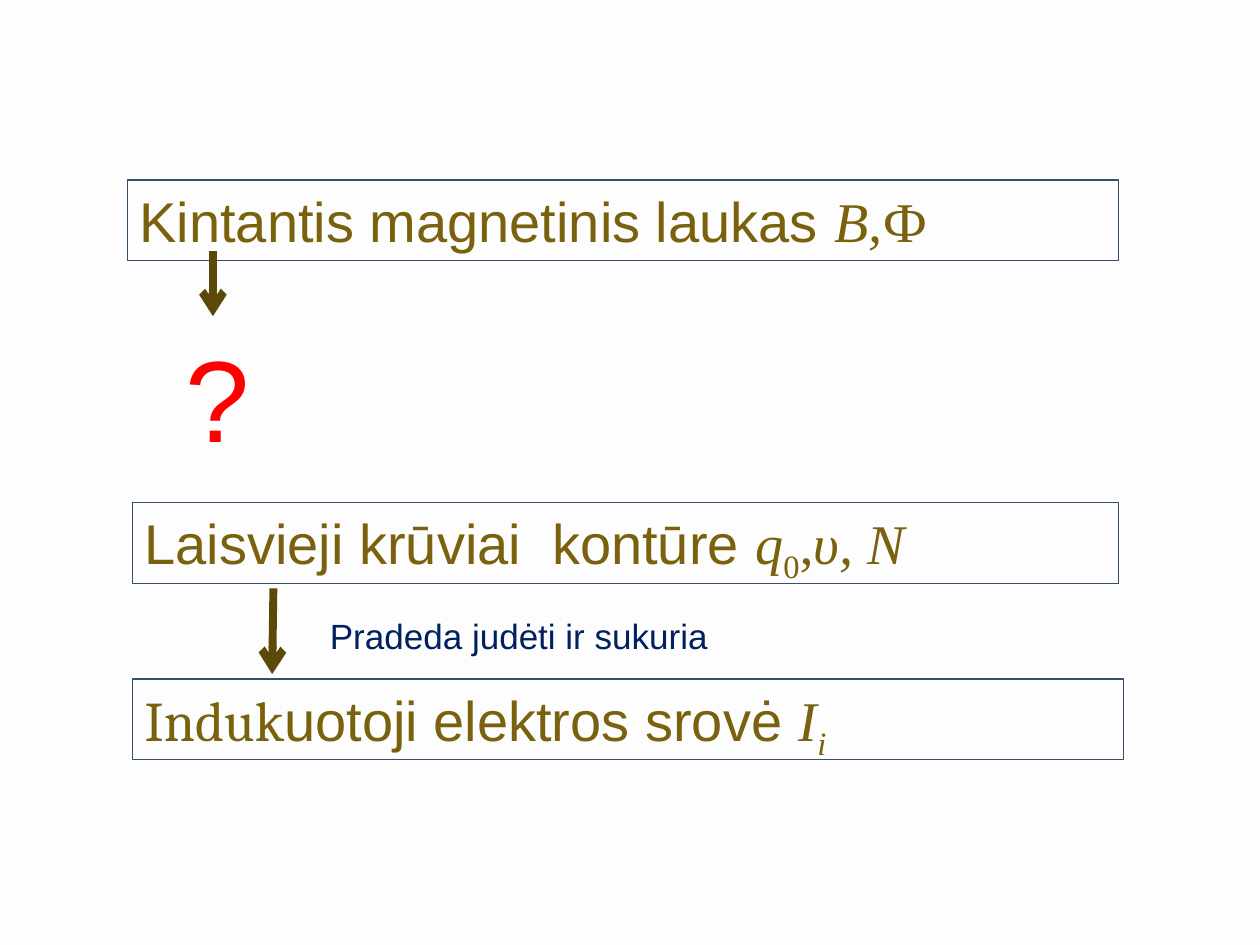
from dataclasses import dataclass

from lxml.etree import SubElement as Sub
from pptx import Presentation
from pptx.dml.color import RGBColor as RGB
from pptx.enum.shapes import MSO_CONNECTOR as Conn, MSO_SHAPE as Shape
from pptx.enum.text import MSO_ANCHOR as Anchor, PP_ALIGN as Align
from pptx.oxml.ns import qn
from pptx.util import Inches, Pt


@dataclass(frozen=True)
class Theme:
    back: RGB = RGB.from_string("FDFDFD")
    frame: RGB = RGB.from_string("344E6D")
    main: RGB = RGB.from_string("7A610D")
    arrow: RGB = RGB.from_string("5C490A")
    note: RGB = RGB.from_string("002060")
    alert: RGB = RGB.from_string("FF0000")
    sans: str = "Arial"
    serif: str = "Cambria"
    math: str = "Times New Roman"
    big: int = 32
    small: int = 20
    huge: int = 66
    thin: float = 0.75
    thick: float = 4.5


class Board:
    def __init__(self, slide, theme):
        self.slide, self.theme = slide, theme
        slide.background.fill.solid()
        slide.background.fill.fore_color.rgb = theme.back

    def style(self, font, size, color):
        font.size = Pt(size)
        font.color.rgb = color

    def box(self, left, top, width, *parts):
        """Framed line of text; each part is (text, font, italic, subscript)."""
        t = self.theme
        box = self.slide.shapes.add_shape(
            Shape.RECTANGLE, Inches(left), Inches(top), Inches(width), Inches(0.64))
        box.shadow.inherit = False
        box.fill.background()
        box.line.color.rgb = t.frame
        box.line.width = Pt(t.thin)
        frame = box.text_frame
        frame.word_wrap = True
        frame.vertical_anchor = Anchor.TOP
        para = frame.paragraphs[0]
        para.alignment = Align.LEFT
        self.style(para.font, t.big, t.main)
        for text, name, italic, sub in parts:
            run = para.add_run()
            run.text = text
            self.style(run.font, t.big, t.main)
            run.font.name = name
            run.font.italic = italic
            if sub:
                run._r.get_or_add_rPr().set("baseline", "-25000")

    def label(self, left, top, width, height, text, size, color):
        box = self.slide.shapes.add_textbox(
            Inches(left), Inches(top), Inches(width), Inches(height))
        box.text_frame.word_wrap = True
        para = box.text_frame.paragraphs[0]
        para.text = text
        self.style(para.font, size, color)
        para.font.name = self.theme.sans

    def arrow(self, x1, y1, x2, y2):
        line = self.slide.shapes.add_connector(
            Conn.STRAIGHT, Inches(x1), Inches(y1), Inches(x2), Inches(y2))
        line.line.color.rgb = self.theme.arrow
        line.line.width = Pt(self.theme.thick)
        Sub(line.line._get_or_add_ln(), qn("a:tailEnd"), type="arrow")
        Sub(line._element.spPr, qn("a:effectLst"))


def main():
    deck = Presentation()
    deck.slide_width, deck.slide_height = Inches(10), Inches(7.5)
    t = Theme()
    board = Board(deck.slides.add_slide(deck.slide_layouts[6]), t)

    board.box(1.01, 1.43, 7.87,
              ("Kintantis magnetinis laukas ", t.sans, False, False),
              ("B,", t.math, True, False),
              ("Ф", t.math, False, False))
    board.box(1.05, 3.99, 7.83,
              ("Laisvieji krūviai  kontūre ", t.sans, False, False),
              ("q", t.math, True, False),
              ("0", t.math, False, True),
              (",", t.math, False, False),
              ("υ, N", t.math, True, False))
    board.box(1.05, 5.39, 7.87,
              ("Induk", t.serif, False, False),
              ("uotoji elektros srovė ", t.sans, False, False),
              ("I", t.math, True, False),
              ("i", t.math, True, True))

    board.label(2.52, 4.83, 6.03, 0.44, "Pradeda judėti ir sukuria", t.small, t.note)
    board.arrow(1.69, 1.99, 1.69, 2.51)
    board.arrow(2.17, 4.67, 2.16, 5.35)
    board.label(1.37, 2.55, 1.32, 1.21, "?", t.huge, t.alert)

    deck.save("out.pptx")


if __name__ == "__main__":
    main()
